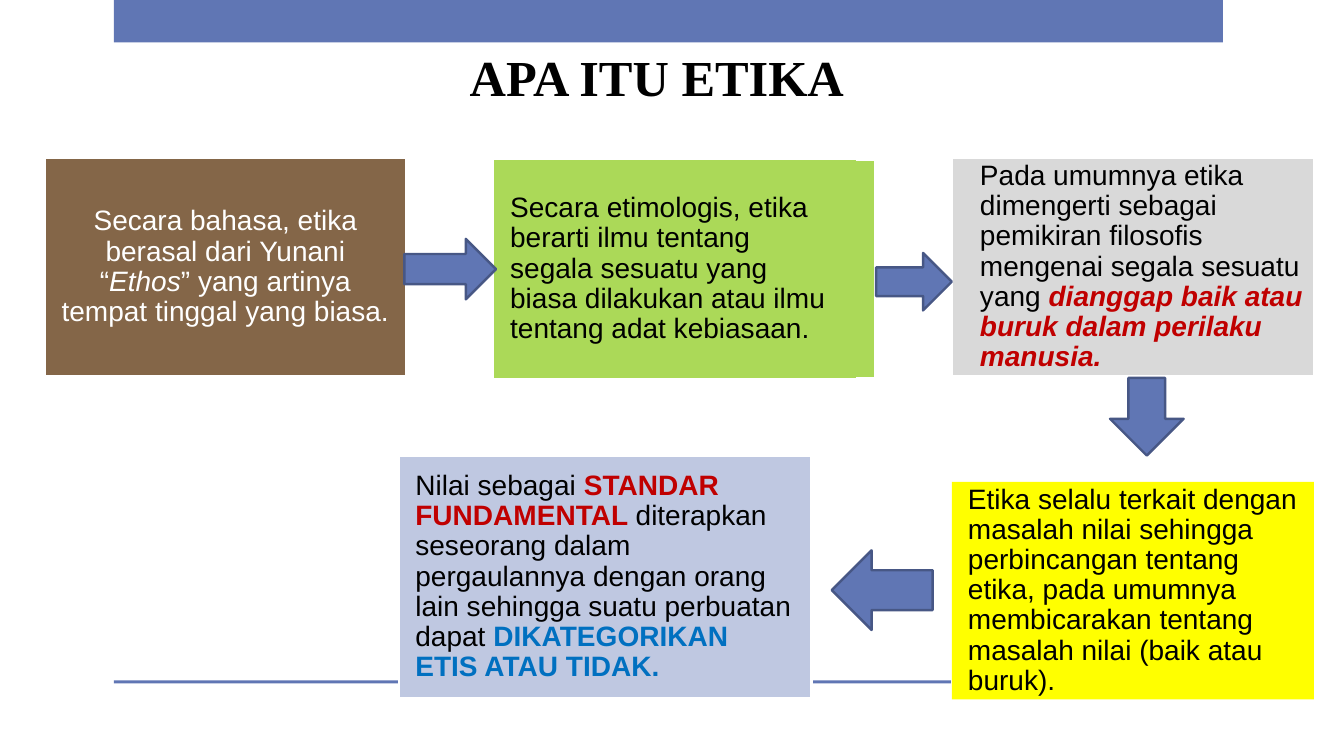
"""Build the slide that explains what ethics is as a chain of five cards."""
from dataclasses import dataclass

import pptx
import pptx.dml.color
import pptx.enum.shapes
import pptx.enum.text
import pptx.util

SHAPE = pptx.enum.shapes.MSO_SHAPE
ALIGN = pptx.enum.text.PP_ALIGN
MIDDLE = pptx.enum.text.MSO_ANCHOR.MIDDLE
EMU_PER_PX = 9144


@dataclass(frozen=True)
class Theme:
    """Colours, fonts and type sizes of the slide."""
    accent: str = "6076B4"
    accent_dark: str = "475785"
    white: str = "FFFFFF"
    black: str = "000000"
    brown: str = "846648"
    green: str = "ABD958"
    grey: str = "D9D9D9"
    yellow: str = "FFFF00"
    pale_blue: str = "BFC8E1"
    red: str = "C00000"
    blue: str = "0070C0"
    title_font: str = "Times New Roman"
    body_font: str = "Arial"
    title_size: int = 36
    body_size: int = 20
    outline: float = 1.75


THEME = Theme()


@dataclass(frozen=True)
class Span:
    """A stretch of text with its own emphasis."""
    text: str
    color: str = ""
    bold: bool = False
    italic: bool = False


def px(value):
    """Turn pixels into EMU."""
    return pptx.util.Emu(value * EMU_PER_PX)


def rgb(color):
    """Turn a hex string into a colour."""
    return pptx.dml.color.RGBColor.from_string(color)


def style_font(font, name, size, color):
    """Set the family, size and colour of a font."""
    font.name = name
    font.size = pptx.util.Pt(size)
    font.color.rgb = rgb(color)


def add_block(page, kind, frame, fill, line=None):
    """Add a filled preset shape, outlined if a line colour is given."""
    block = page.shapes.add_shape(kind, *map(px, frame))
    block.shadow.inherit = False
    block.fill.solid()
    block.fill.fore_color.rgb = rgb(fill)
    if line:
        block.line.color.rgb = rgb(line)
        block.line.width = pptx.util.Pt(THEME.outline)
    else:
        block.line.fill.background()
    return block


def write_card(box, spans, color, align):
    """Write one paragraph of spans into a card."""
    text = box.text_frame
    text.word_wrap = True
    text.vertical_anchor = MIDDLE
    text.margin_left = text.margin_right = px(16)
    text.margin_top = text.margin_bottom = px(16)
    para = text.paragraphs[0]
    para.alignment = align
    para.line_spacing = 0.9
    style_font(para.font, THEME.body_font, THEME.body_size, color)
    for span in spans:
        run = para.add_run()
        run.text = span.text
        style_font(run.font, THEME.body_font, THEME.body_size, span.color or color)
        if span.bold:
            run.font.bold = True
        if span.italic:
            run.font.italic = True


def add_card(page, frame, fill, spans, color=THEME.black, align=ALIGN.LEFT,
             shift=0, covered=False):
    """Add a card whose text may sit aside, on a second panel if covered."""
    box = add_block(page, SHAPE.RECTANGLE, frame, fill, THEME.white)
    left, top, width, height = frame
    text_frame = (left + shift, top, width, height)
    if covered:
        box = add_block(page, SHAPE.RECTANGLE, text_frame, fill)
    elif shift:
        box = page.shapes.add_textbox(*map(px, text_frame))
    write_card(box, spans, color, align)


def add_title(page, words):
    """Place and format the title placeholder."""
    title = page.shapes.title
    title.left, title.top, title.width, title.height = map(px, (159, 40, 985, 71))
    title.text_frame.text = words
    title.text_frame.vertical_anchor = MIDDLE
    para = title.text_frame.paragraphs[0]
    para.alignment = ALIGN.CENTER
    style_font(para.font, THEME.title_font, THEME.title_size, THEME.black)
    para.font.bold = True


def add_cards(page):
    """Add the five cards in reading order."""
    add_card(page, (44, 157, 359, 216), THEME.brown, [
        Span("Secara bahasa, etika berasal dari Yunani “"),
        Span("Ethos", italic=True),
        Span("” yang artinya tempat tinggal yang biasa."),
    ], color=THEME.white, align=ALIGN.CENTER)
    add_card(page, (509, 159, 359, 216), THEME.green, [
        Span("Secara etimologis, etika berarti ilmu tentang segala sesuatu "
             "yang biasa dilakukan atau ilmu tentang adat kebiasaan."),
    ], shift=-19, covered=True)
    add_card(page, (944, 157, 359, 216), THEME.grey, [
        Span("Pada umumnya etika dimengerti sebagai pemikiran filosofis "
             "mengenai segala sesuatu yang "),
        Span("dianggap baik atau buruk dalam perilaku manusia.",
             THEME.red, bold=True, italic=True),
    ], shift=12)
    add_card(page, (944, 478, 359, 216), THEME.yellow, [
        Span("Etika selalu terkait dengan masalah nilai sehingga perbincangan "
             "tentang etika, pada umumnya membicarakan tentang masalah nilai "
             "(baik atau buruk)."),
    ], covered=True)
    add_card(page, (396, 452, 409, 241), THEME.pale_blue, [
        Span("Nilai sebagai "),
        Span("STANDAR FUNDAMENTAL ", THEME.red, bold=True),
        Span("diterapkan seseorang dalam pergaulannya dengan orang lain "
             "sehingga suatu perbuatan dapat "),
        Span("DIKATEGORIKAN ETIS ATAU TIDAK.", THEME.blue, bold=True),
    ])


def main():
    """Build the deck and save it."""
    deck = pptx.Presentation()
    deck.slide_width, deck.slide_height = px(1333), px(750)
    page = deck.slides.add_slide(deck.slide_layouts.get_by_name("Title Only"))
    for top, height in ((0, 42), (675, 3)):
        add_block(page, SHAPE.RECTANGLE, (113, top, 1100, height), THEME.accent)
    add_title(page, "APA ITU ETIKA")
    add_cards(page)
    for kind, frame in (
        (SHAPE.RIGHT_ARROW, (401, 237, 91, 60)),
        (SHAPE.RIGHT_ARROW, (869, 251, 75, 57)),
        (SHAPE.DOWN_ARROW, (1101, 375, 73, 77)),
        (SHAPE.LEFT_ARROW, (825, 546, 100, 79)),
    ):
        add_block(page, kind, frame, THEME.accent, THEME.accent_dark)
    deck.save("out.pptx")


if __name__ == "__main__":
    main()
